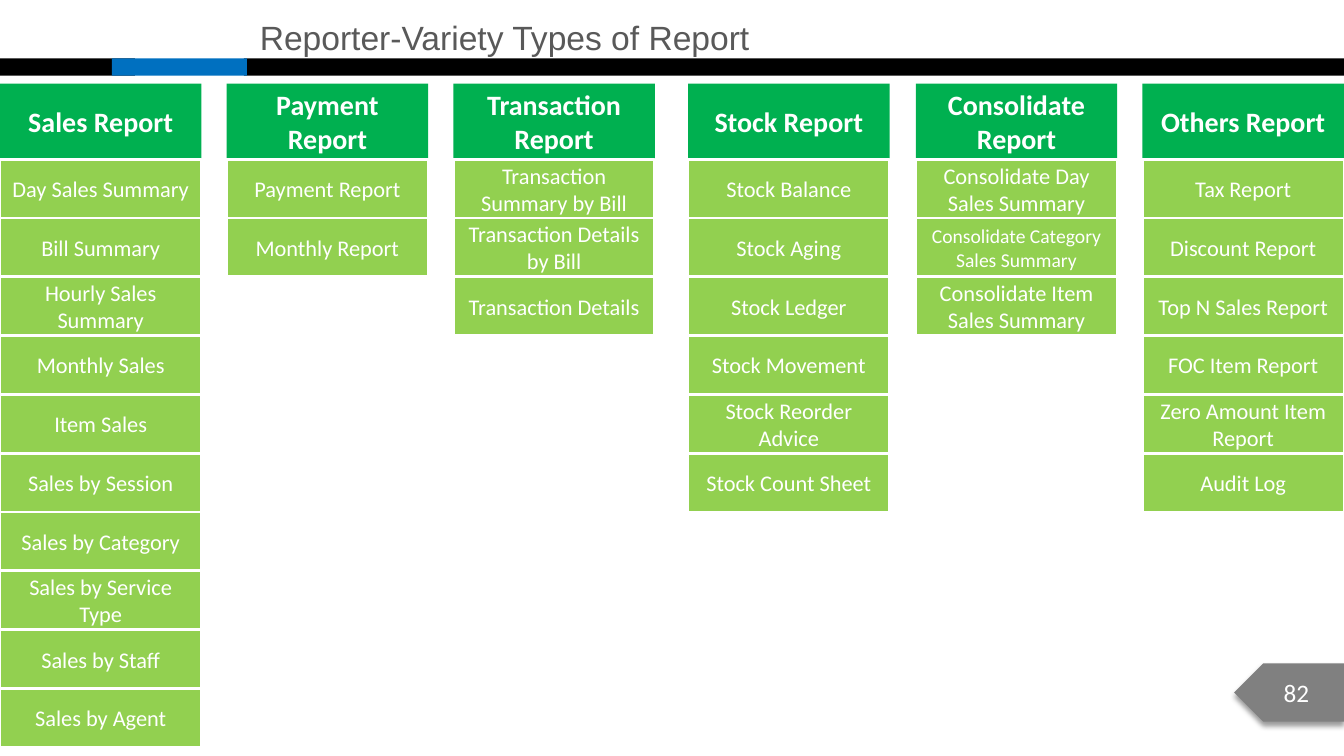
from dataclasses import dataclass

from lxml import etree
from pptx import Presentation
from pptx import util as u
from pptx.dml import color
from pptx.enum import shapes, text
from pptx.oxml import ns

WHITE, BLACK, BLUE, GREY = "FFFFFF", "000000", "0070C0", "808080"
GREEN, LIME, SLATE = "00B050", "92D050", "595959"
RECT = shapes.MSO_SHAPE.RECTANGLE
WIDE, HEAD_TOP, HEAD_HIGH = 2, 0.83, 0.75
ROW_TOP, ROW_HIGH = 1.58, 7 / 12


@dataclass
class Font:
    size: float
    name: str = "Calibri"
    tint: str = WHITE
    bold: bool = False


@dataclass
class Box:
    left: float
    top: float
    wide: float
    high: float
    fill: str
    edge: str = ""
    kind: shapes.MSO_SHAPE = RECT


@dataclass
class Group:
    left: float
    head: str
    items: list[str]


HEAD, ITEM, SMALL = Font(20, bold=True), Font(16), Font(14)
SMALL_ITEMS = {"Consolidate Category Sales Summary"}

BARS = [
    Box(0, 0.58, 1.34, 0.17, BLACK),
    Box(2.42, 0.58, 10.92, 0.17, BLACK),
    Box(1.11, 0.58, 1.34, 0.17, BLUE),
]

GROUPS = [
    Group(0, "Sales Report", [
        "Day Sales Summary", "Bill Summary", "Hourly Sales Summary",
        "Monthly Sales", "Item Sales", "Sales by Session",
        "Sales by Category", "Sales by Service Type", "Sales by Staff",
        "Sales by Agent"]),
    Group(2.25, "Payment Report", ["Payment Report", "Monthly Report"]),
    Group(4.5, "Transaction Report", [
        "Transaction Summary by Bill", "Transaction Details by Bill",
        "Transaction Details"]),
    Group(6.83, "Stock Report", [
        "Stock Balance", "Stock Aging", "Stock Ledger", "Stock Movement",
        "Stock Reorder Advice", "Stock Count Sheet"]),
    Group(9.09, "Consolidate Report", [
        "Consolidate Day Sales Summary",
        "Consolidate Category Sales Summary",
        "Consolidate Item Sales Summary"]),
    Group(11.34, "Others Report", [
        "Tax Report", "Discount Report", "Top N Sales Report",
        "FOC Item Report", "Zero Amount Item Report", "Audit Log"]),
]


def rgb(code: str) -> color.RGBColor:
    return color.RGBColor.from_string(code)


def add_run(para, words: str, font: Font) -> None:
    run = para.add_run()
    run.text = words
    run.font.size = u.Pt(font.size)
    run.font.name = font.name
    run.font.bold = font.bold
    run.font.color.rgb = rgb(font.tint)


def add_box(slide, box: Box, words: str = "", font: Font = ITEM):
    shape = slide.shapes.add_shape(
        box.kind, u.Inches(box.left), u.Inches(box.top),
        u.Inches(box.wide), u.Inches(box.high))
    shape.shadow.inherit = False
    shape.fill.solid()
    shape.fill.fore_color.rgb = rgb(box.fill)
    if box.edge:
        shape.line.color.rgb = rgb(box.edge)
        shape.line.width = u.Pt(2)
    else:
        shape.line.fill.background()
    if words:
        frame = shape.text_frame
        frame.word_wrap = True
        frame.vertical_anchor = text.MSO_ANCHOR.MIDDLE
        para = frame.paragraphs[0]
        para.alignment = text.PP_ALIGN.CENTER
        add_run(para, words, font)
    return shape


def add_title(slide) -> None:
    label = slide.shapes.add_textbox(
        u.Inches(2.48), u.Inches(-0.08), u.Inches(5.11), u.Inches(0.63))
    frame = label.text_frame
    frame.word_wrap = False
    frame.auto_size = text.MSO_AUTO_SIZE.SHAPE_TO_FIT_TEXT
    para = frame.paragraphs[0]
    para.line_spacing = 1.5
    add_run(para, "Reporter-Variety Types of Report",
            Font(24, "Arial", SLATE))


def add_tag(slide) -> None:
    """Draw the page number on a left-pointing tag with a soft shadow."""
    tag = add_box(slide, Box(12.25, 6.58, 1.09, 0.58, GREY,
                             kind=shapes.MSO_SHAPE.PENTAGON), "82", Font(18))
    props = tag.element.spPr
    props.find(ns.qn("a:xfrm")).set("flipH", "1")
    glow = etree.SubElement(
        props.find(ns.qn("a:effectLst")), ns.qn("a:outerShdw"),
        blurRad=str(u.Pt(4)), dist=str(u.Pt(3)), dir=str(90 * 60000),
        rotWithShape="0")
    tint = etree.SubElement(glow, ns.qn("a:srgbClr"), val=BLACK)
    etree.SubElement(tint, ns.qn("a:alpha"), val="40000")


def add_group(slide, group: Group) -> None:
    add_box(slide, Box(group.left, HEAD_TOP, WIDE, HEAD_HIGH, GREEN),
            group.head, HEAD)
    for row, item in enumerate(group.items):
        top = ROW_TOP + row * ROW_HIGH
        font = SMALL if item in SMALL_ITEMS else ITEM
        add_box(slide, Box(group.left, top, WIDE, ROW_HIGH, LIME, WHITE),
                item, font)


def main() -> None:
    deck = Presentation()
    deck.slide_width, deck.slide_height = u.Inches(13.34), u.Inches(7.5)
    slide = deck.slides.add_slide(deck.slide_layouts[6])
    add_title(slide)
    for bar in BARS:
        add_box(slide, bar)
    add_tag(slide)
    for group in GROUPS:
        add_group(slide, group)
    deck.save("out.pptx")


if __name__ == "__main__":
    main()
